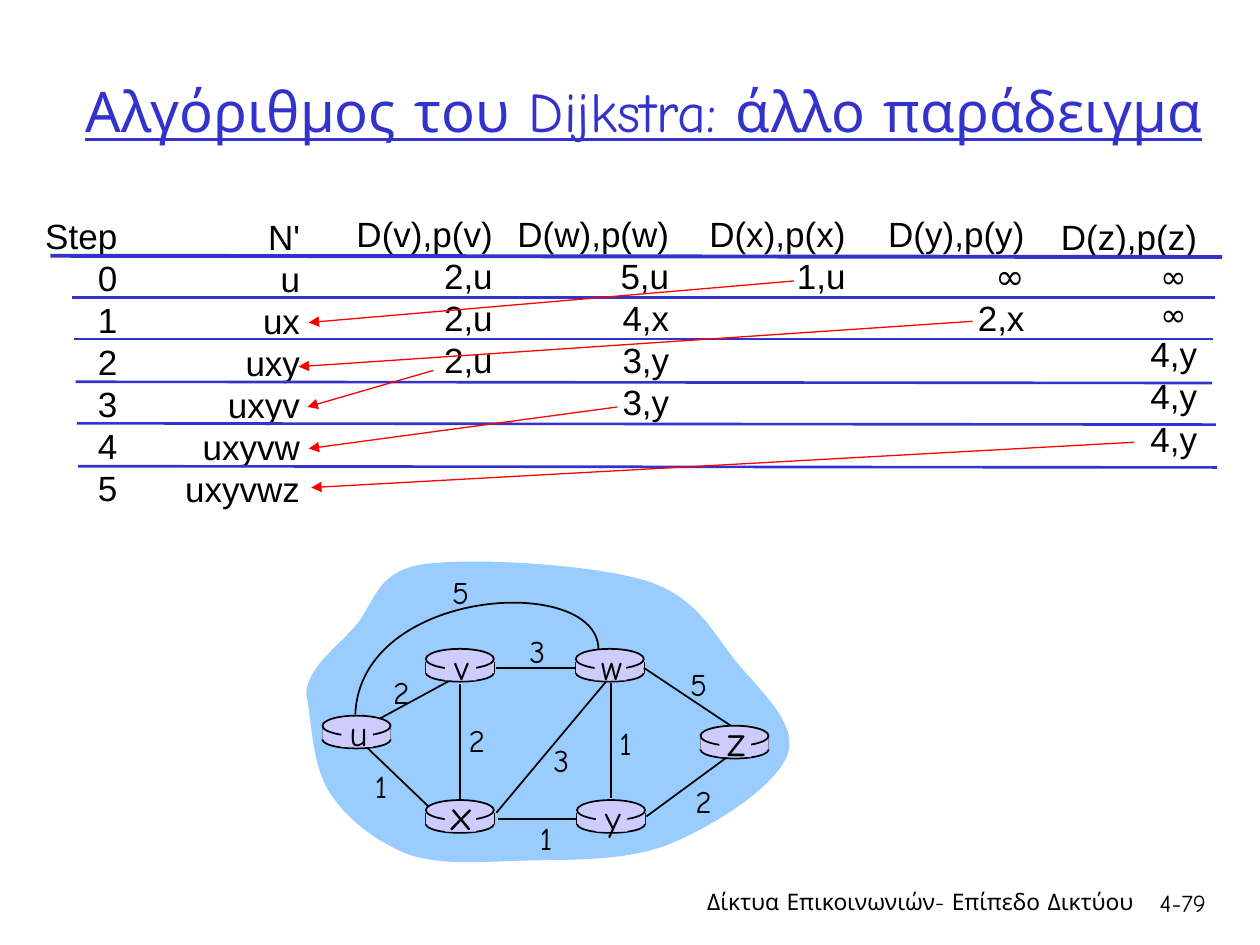
"""Build a slide tracing Dijkstra's algorithm with a step table and a network graph."""
from pptx import Presentation, util as u
from pptx.dml.color import RGBColor
from pptx.enum import shapes, text
from pptx.oxml import ns
from lxml import etree

PX = 9144
THEME = {
    "font": "Arial", "hand": "Comic Neue",
    "ink": "000000", "blue": "3333CC", "red": "FF0000", "router": "CCCCFF", "cloud": "99CCFF",
    "title": 32, "cell": 20, "small": 18, "name": 20, "large": 24, "page": 14, "footer": 13,
}
TITLE = "Αλγόριθμος του Dijkstra: άλλο παράδειγμα"
FOOTER = "Δίκτυα Επικοινωνιών- Επίπεδο Δικτύου"
PAGE_NUMBER = "4-79"

COLUMNS = [
    (26, 165, 77, ["Step", "0", "1", "2", "3", "4", "5"]),
    (137, 166, 111, ["N'", "u", "ux", "uxy", "uxyv", "uxyvw", "uxyvwz"]),
    (273, 164, 128, ["D(v),p(v)", "2,u", "2,u", "2,u"]),
    (399, 164, 142, ["D(w),p(w)", "5,u", "4,x", "3,y", "3,y"]),
    (553, 164, 128, ["D(x),p(x)", "1,u"]),
    (695, 164, 128, ["D(y),p(y)", "∞", "2,x"]),
    (832, 166, 128, ["D(z),p(z)", "∞ ", "∞ ", "4,y", "4,y", "4,y"]),
]
RULES = [
    (40, 203, 970, 204), (57, 236, 964, 236), (59, 269, 963, 269),
    (60, 303, 962, 304), (61, 336, 965, 337), (62, 370, 966, 371),
]
CHOICES = [
    (630, 223, 245, 256), (772, 255, 237, 291), (344, 294, 244, 323),
    (490, 323, 245, 356), (900, 351, 247, 387),
]
ROUTERS = {
    "u": (256, 568, "name"), "x": (338, 635, "large"), "v": (338, 515, "name"),
    "w": (457, 515, "name"), "y": (458, 635, "name"), "z": (556, 576, "large"),
}
EDGES = [
    (302, 570, 361, 538), (485, 542, 485, 633), (365, 543, 365, 636),
    (394, 645, 481, 541), (513, 648, 577, 601), (458, 650, 395, 650),
    (340, 640, 292, 594), (457, 530, 394, 530), (580, 576, 511, 530),
]
COSTS = [
    ("2", 318, 549), ("2", 378, 587), ("1", 302, 624), ("3", 445, 603), ("1", 433, 665),
    ("1", 496, 590), ("2", 558, 636), ("5", 554, 543), ("3", 426, 517), ("5", 365, 470),
]
CLOUD = [
    (243, 551), (244, 530), (266, 515), (281, 498), (297, 481), (297, 454), (335, 448),
    (374, 442), (471, 448), (513, 461), (554, 474), (566, 503), (585, 526),
    (604, 549), (634, 575), (625, 599), (616, 624), (566, 656), (531, 670),
    (496, 684), (450, 682), (416, 683), (381, 684), (350, 687), (324, 678),
    (298, 668), (274, 649), (261, 628), (247, 606), (247, 566), (243, 551),
]
ARC = [(475, 515), (474, 455), (286, 466), (282, 567)]


def color(name):
    return RGBColor.from_string(THEME[name])


def add_text(page, place, lines, size, align, font="hand", ink="ink",
             wrap=False, anchor=text.MSO_ANCHOR.TOP, underline=None):
    box = page.shapes.add_textbox(*(n * PX for n in place))
    frame = box.text_frame
    frame.word_wrap = wrap
    frame.vertical_anchor = anchor
    if not wrap:
        frame.auto_size = text.MSO_AUTO_SIZE.SHAPE_TO_FIT_TEXT
    for number, line in enumerate(lines):
        para = frame.paragraphs[0] if number == 0 else frame.add_paragraph()
        para.alignment = align
        span = para.add_run()
        span.text = line
        span.font.name = THEME["hand" if "∞" in line else font]
        span.font.size = u.Pt(THEME["small" if line == "∞ " else size])
        span.font.color.rgb = color(ink)
        span.font.underline = underline


def add_line(page, ends, ink="ink", width=1, arrow=False):
    line = page.shapes.add_connector(shapes.MSO_CONNECTOR.STRAIGHT, *(n * PX for n in ends))
    line.line.color.rgb = color(ink)
    line.line.width = u.Pt(width)
    if arrow:
        etree.SubElement(line.line._get_or_add_ln(), ns.qn("a:tailEnd"), type="triangle")
    etree.SubElement(line._element.spPr, ns.qn("a:effectLst"))


def paint(shape, fill=None, ink=None):
    shape.shadow.inherit = False
    if fill:
        shape.fill.solid()
        shape.fill.fore_color.rgb = color(fill)
    else:
        shape.fill.background()
    if ink:
        shape.line.color.rgb = color(ink)
        shape.line.width = u.Pt(1)
    else:
        shape.line.fill.background()


def add_router_part(page, kind, place, ink=None):
    part = page.shapes.add_shape(kind, *(n * PX for n in place))
    paint(part, "router", ink)


def add_curve(page, points, close, fill=None, ink=None):
    first, *rest = points
    builder = page.shapes.build_freeform(*first, scale=PX)
    builder.add_line_segments(rest, close=close)
    shape = builder.convert_to_shape()
    segments = list(shape._element.iter(ns.qn("a:lnTo")))
    for start in range(0, len(rest), 3):
        curve = etree.Element(ns.qn("a:cubicBezTo"))
        segments[start].addprevious(curve)
        for segment in segments[start:start + 3]:
            curve.append(segment[0])
            segment.getparent().remove(segment)
    paint(shape, fill, ink)


def add_router(page, x, y):
    oval, block = shapes.MSO_SHAPE.OVAL, shapes.MSO_SHAPE.RECTANGLE
    add_router_part(page, oval, (x, y + 12, 54, 14), "ink")
    for side in (x, x + 54):
        add_line(page, (side, y + 10, side, y + 19))
    add_router_part(page, block, (x, y + 10, 54, 9))
    add_router_part(page, oval, (x, y, 54, 16), "ink")


def main():
    left, center, right = text.PP_ALIGN.LEFT, text.PP_ALIGN.CENTER, text.PP_ALIGN.RIGHT
    deck = Presentation()
    deck.slide_width, deck.slide_height = 1000 * PX, 750 * PX
    page = deck.slides.add_slide(deck.slide_layouts[6])

    add_text(page, (58, 25, 930, 125), [TITLE], "title", left, ink="blue", wrap=True,
             anchor=text.MSO_ANCHOR.MIDDLE, underline=True)
    for x, y, width, lines in COLUMNS:
        height = 10 + 33 * len(lines)
        add_text(page, (x, y, width, height), lines, "cell", right, font="font")
    for number, ends in enumerate(RULES):
        add_line(page, ends, "blue", 1.5 if number else 2.25)

    add_curve(page, CLOUD, True, fill="cloud")
    for x, y, size in ROUTERS.values():
        add_router(page, x, y)
    for ends in EDGES:
        add_line(page, ends)
    add_curve(page, ARC, False, ink="ink")
    for name, (x, y, size) in ROUTERS.items():
        add_router_part(page, shapes.MSO_SHAPE.RECTANGLE, (x + 15, y + 2, 25, 23))
        height, middle = (50, y + 11) if size == "large" else (43, y + 13)
        add_text(page, (x + 9, middle - height // 2, 39, height), [name], size, center)
    for cost, x, y in COSTS:
        add_text(page, (x - 17, y - 20, 35, 40), [cost], "small", center)
    for ends in CHOICES:
        add_line(page, ends, "red", 0.75, arrow=True)

    add_text(page, (528, 700, 381, 50), [FOOTER], "footer", right, wrap=True)
    add_text(page, (893, 700, 74, 50), [PAGE_NUMBER], "page", right, wrap=True)
    deck.save("out.pptx")


if __name__ == "__main__":
    main()
